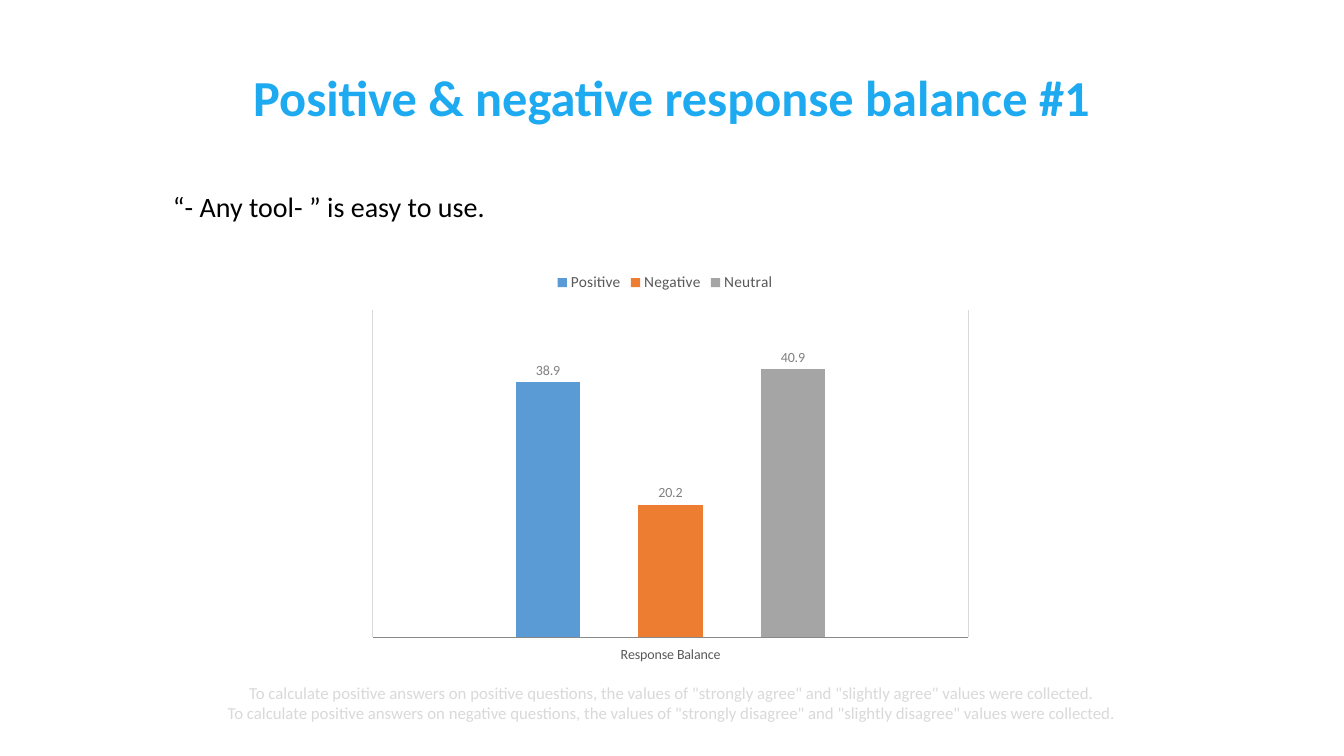
"""Build the slide that shows the balance of positive, negative and neutral responses."""
from dataclasses import dataclass

from lxml import etree
from pptx import Presentation
from pptx import util as u
from pptx.chart.chart import Chart
from pptx.chart.data import CategoryChartData
from pptx.dml.color import RGBColor
from pptx.enum import chart as ch, text as t
from pptx.oxml import ns
from pptx.slide import Slide
from pptx.text.text import Font, TextFrame

FONT = "Calibri"
NUMBER_FORMAT = "0.#"
PLOT_AREA = {"x": 0.023, "y": 0.119, "w": 0.972, "h": 0.819}


@dataclass(frozen=True)
class Response:
    name: str
    value: float
    color: str


RESPONSES = [
    Response("Positive", 38.9, "5B9BD5"),
    Response("Negative", 20.2, "ED7D31"),
    Response("Neutral", 40.9, "A5A5A5"),
]
NOTES = [
    'To calculate positive answers on positive questions, the values of '
    '"strongly agree" and "slightly agree" values were collected.',
    'To calculate positive answers on negative questions, the values of '
    '"strongly disagree" and "slightly disagree" values were collected.',
]


def rgb(color: str) -> RGBColor:
    return RGBColor.from_string(color)


def style_font(font: Font, size: float, color: str, bold: bool = False) -> None:
    font.name = FONT
    font.size = u.Pt(size)
    font.bold = bold
    font.color.rgb = rgb(color)


def write(frame: TextFrame, lines: list[str], *, size: float, color: str, bold: bool = False,
          align=t.PP_ALIGN.LEFT, anchor=t.MSO_ANCHOR.TOP, spacing: float = 1.0,
          before: float = 0, fit=t.MSO_AUTO_SIZE.NONE) -> None:
    frame.word_wrap = True
    frame.auto_size = fit
    frame.vertical_anchor = anchor
    frame.margin_left = frame.margin_right = u.Cm(0.13)
    frame.margin_top = frame.margin_bottom = u.Cm(0.13)
    for index, line in enumerate(lines):
        para = frame.add_paragraph() if index else frame.paragraphs[0]
        para.alignment = align
        para.line_spacing = spacing
        para.space_before = u.Pt(before)
        span = para.add_run()
        span.text = line
        style_font(span.font, size, color, bold)


def place_plot(chart: Chart) -> None:
    area = chart.plots[0]._element.getparent()
    for old in area.findall(ns.qn("c:layout")):
        area.remove(old)
    layout = etree.Element(ns.qn("c:layout"))
    manual = etree.SubElement(layout, ns.qn("c:manualLayout"))
    settings = {"layoutTarget": "inner", "xMode": "edge", "yMode": "edge", **PLOT_AREA}
    for tag, value in settings.items():
        etree.SubElement(manual, ns.qn(f"c:{tag}")).set("val", str(value))
    area.insert(0, layout)


def style_axes(chart: Chart) -> None:
    category, value = chart.category_axis, chart.value_axis
    for axis in (category, value):
        axis.major_tick_mark = axis.minor_tick_mark = ch.XL_TICK_MARK.NONE
    category.tick_label_position = ch.XL_TICK_LABEL_POSITION.LOW
    style_font(category.tick_labels.font, 10, "595959")
    category.has_major_gridlines = True
    for line, color in ((category.format.line, "888888"),
                        (category.major_gridlines.format.line, "D9D9D9")):
        line.color.rgb = rgb(color)
        line.width = u.Pt(1)
    value.minimum_scale, value.maximum_scale, value.major_unit = 0, 50, 12.5
    value.has_major_gridlines = False
    value.tick_label_position = ch.XL_TICK_LABEL_POSITION.NONE
    value.format.line.fill.background()


def add_response_chart(slide: Slide) -> None:
    data = CategoryChartData(number_format=NUMBER_FORMAT)
    data.categories = ["Response Balance"]
    for response in RESPONSES:
        data.add_series(response.name, [response.value])
    chart = slide.shapes.add_chart(ch.XL_CHART_TYPE.COLUMN_CLUSTERED, u.Cm(9.04), u.Cm(6.6),
                                   u.Cm(15.44), u.Cm(10.11), data).chart
    style_font(chart.font, 10, "000000")
    chart.has_title = False
    chart.has_legend = True
    chart.legend.position = ch.XL_LEGEND_POSITION.TOP
    chart.legend.include_in_layout = True
    style_font(chart.legend.font, 11, "595959")
    style_axes(chart)
    plot = chart.plots[0]
    plot.gap_width, plot.overlap, plot.vary_by_categories = 444, -90, False
    for series, response in zip(plot.series, RESPONSES):
        series.format.fill.solid()
        series.format.fill.fore_color.rgb = rgb(response.color)
        labels = series.data_labels
        labels.show_value = True
        labels.position = ch.XL_LABEL_POSITION.OUTSIDE_END
        labels.number_format = NUMBER_FORMAT
        labels.number_format_is_linked = False
        style_font(labels.font, 10, "808080")
    place_plot(chart)


def main() -> None:
    deck = Presentation()
    deck.slide_width, deck.slide_height = u.Cm(33.87), u.Cm(19.05)
    page = deck.slides.add_slide(deck.slide_layouts[5])

    title = page.shapes.title
    title.left, title.top, title.width, title.height = map(u.Cm, (4.23, 1.7, 25.4, 1.65))
    write(title.text_frame, ["Positive & negative response balance #1"], size=36,
          color="1EAAF0", bold=True, align=t.PP_ALIGN.CENTER, anchor=t.MSO_ANCHOR.BOTTOM,
          spacing=0.9)

    statement = page.shapes.add_textbox(u.Cm(4.23), u.Cm(4.23), u.Cm(25.4), u.Cm(3.81))
    write(statement.text_frame, ["“- Any tool- ” is easy to use."], size=20, color="000000",
          spacing=1.5, before=10)

    add_response_chart(page)

    note = page.shapes.add_textbox(u.Cm(0.13), u.Cm(17.1), u.Cm(33.6), u.Cm(1.22))
    write(note.text_frame, NOTES, size=12, color="D9D9D9", align=t.PP_ALIGN.CENTER,
          anchor=t.MSO_ANCHOR.MIDDLE, fit=t.MSO_AUTO_SIZE.SHAPE_TO_FIT_TEXT)
    deck.save("out.pptx")


if __name__ == "__main__":
    main()
